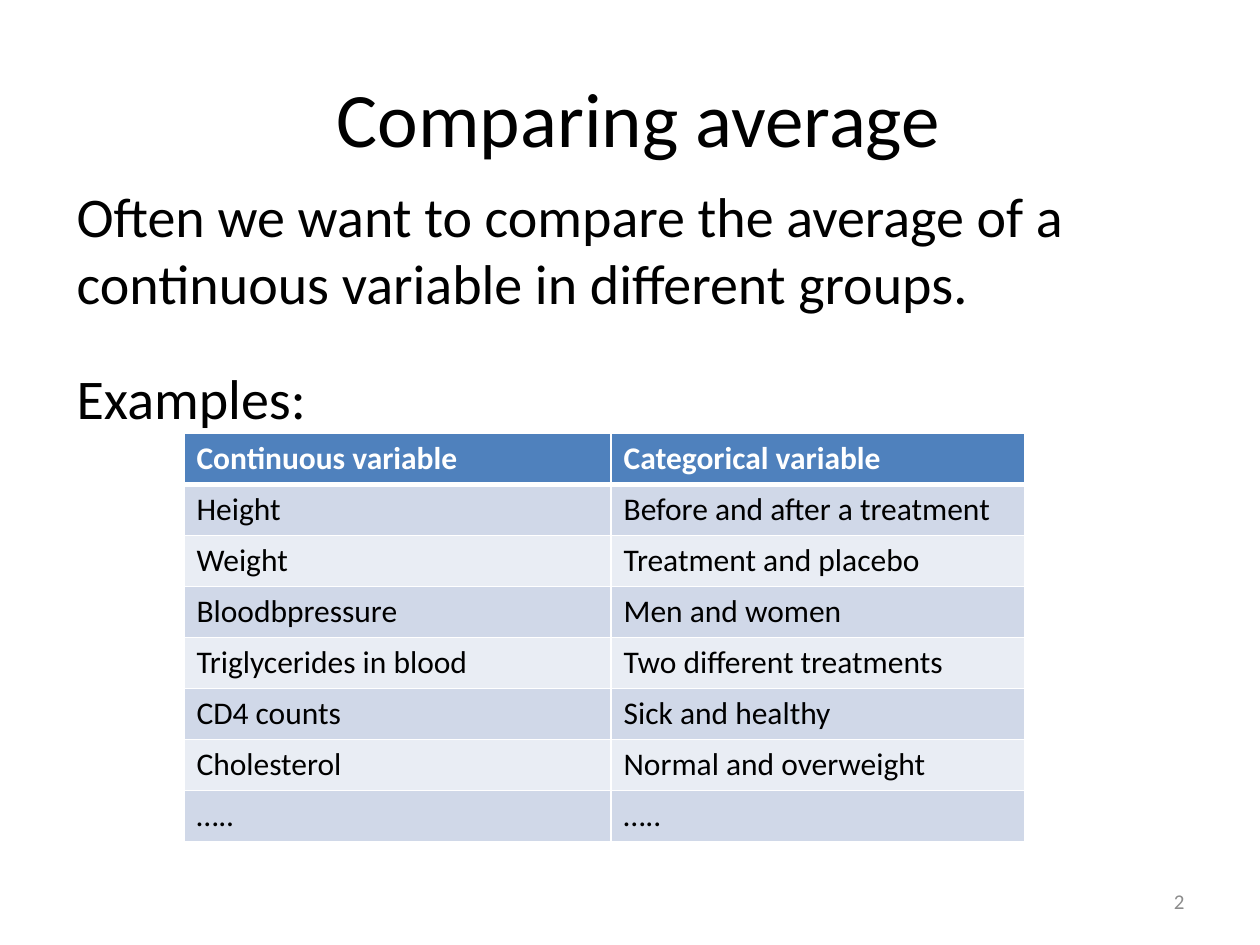
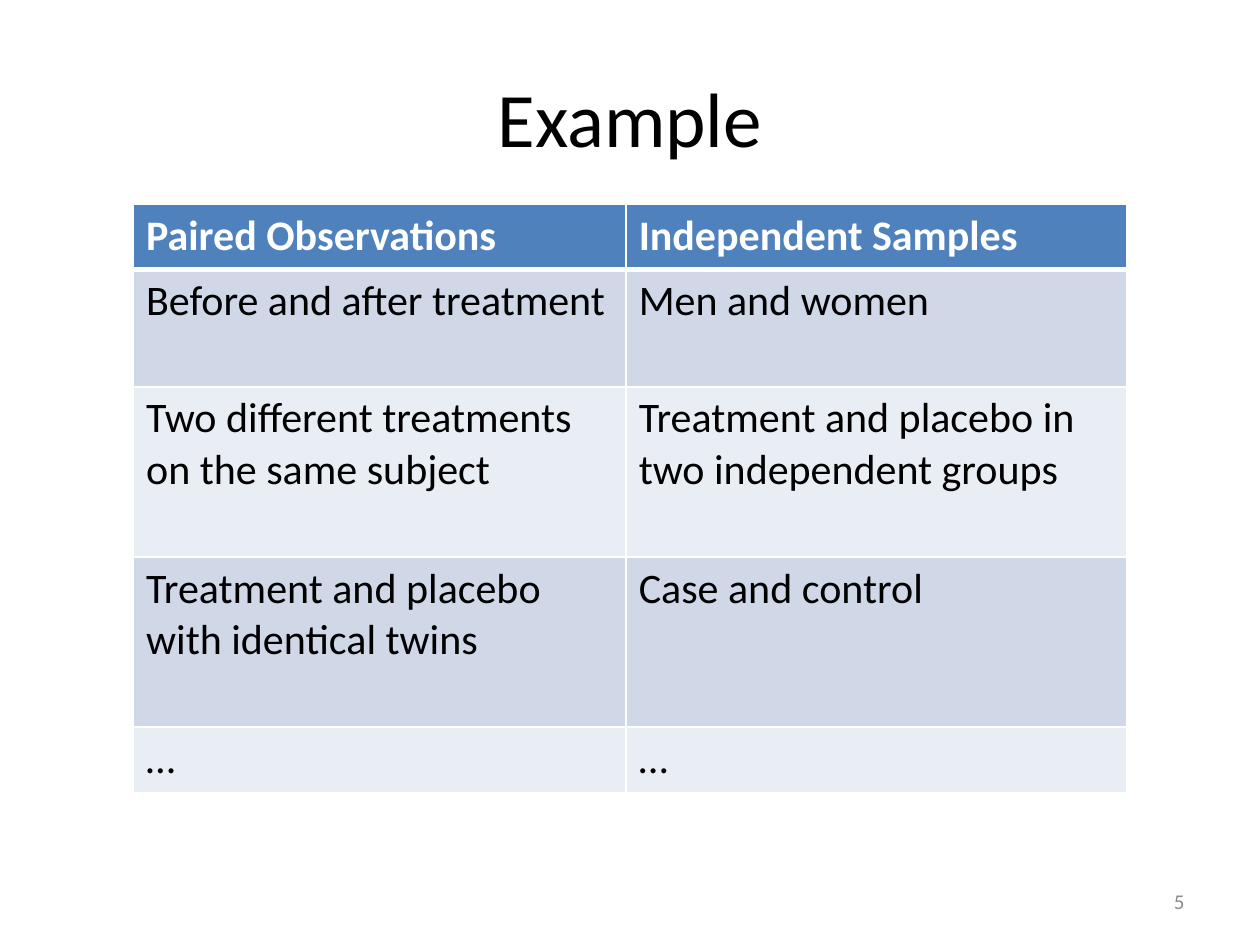
from dataclasses import dataclass

from lxml.etree import SubElement
from pptx import Presentation
from pptx.dml.color import RGBColor
from pptx.enum.text import MSO_ANCHOR, PP_ALIGN
from pptx.oxml.ns import qn
from pptx.util import Inches, Pt


@dataclass(frozen=True)
class Theme:
    """Colours, font and type sizes shared by all slides."""
    font: str = "Calibri"
    ink: str = "000000"
    white: str = "FFFFFF"
    header: str = "4F81BD"
    bands: tuple = ("D0D8E8", "E9EDF4")
    muted: str = "8C8C8C"
    title: int = 44
    body: int = 32
    number: int = 12
    rule: int = 1
    header_rule: int = 3


class Deck:
    """Draws slides on a grid of 100 columns by 75 rows."""

    def __init__(self, theme):
        """Open a 4:3 presentation."""
        self.theme = theme
        self.prs = Presentation()
        self.prs.slide_width, self.prs.slide_height = Inches(10), Inches(7.5)
        self.col = self.prs.slide_width / 100
        self.row = self.prs.slide_height / 75

    def cols(self, n):
        """Return the length of n grid columns."""
        return round(n * self.col)

    def rows(self, n):
        """Return the length of n grid rows."""
        return round(n * self.row)

    def slide(self, title, number):
        """Start a slide with its title and number."""
        self.s = self.prs.slides.add_slide(self.prs.slide_layouts[6])
        t = self.theme
        self.text([title], (5, 3, 90, 12.5), t.title, t.ink, PP_ALIGN.CENTER, MSO_ANCHOR.MIDDLE)
        self.text([number], (71.7, 69.5, 23.3, 4), t.number, t.muted, PP_ALIGN.RIGHT, MSO_ANCHOR.MIDDLE)

    def style(self, p, size, color, bold=False):
        """Set the font of a paragraph."""
        f = p.font
        f.name, f.size, f.bold = self.theme.font, Pt(size), bold
        f.color.rgb = RGBColor.from_string(color)

    def text(self, lines, box, size, color, align=PP_ALIGN.LEFT, anchor=MSO_ANCHOR.TOP, gap=0):
        """Add a text box with one paragraph per line."""
        x, y, w, h = box
        sp = self.s.shapes.add_textbox(self.cols(x), self.rows(y), self.cols(w), self.rows(h))
        tf = sp.text_frame
        tf.word_wrap, tf.vertical_anchor = True, anchor
        for i, line in enumerate(lines):
            p = tf.add_paragraph() if i else tf.paragraphs[0]
            p.text, p.alignment = line, align
            p.space_before = Pt(gap if i else 0)
            self.style(p, size, color)

    def borders(self, cell, **widths):
        """Rule the sides L, R, T and B of a cell in white."""
        tcPr = cell._tc.get_or_add_tcPr()
        for i, side in enumerate("LRTB"):
            width = widths.get(side, self.theme.rule)
            ln = SubElement(tcPr, qn(f"a:ln{side}"), w=str(Pt(width)))
            fill = SubElement(ln, qn("a:solidFill"))
            SubElement(fill, qn("a:srgbClr"), val=self.theme.white)
            tcPr.insert(i, ln)

    def table(self, records, at, widths, heights, size):
        """Add a banded table whose first record is the header."""
        t = self.theme
        frame = self.s.shapes.add_table(
            len(records), len(widths), self.cols(at[0]), self.rows(at[1]),
            self.cols(sum(widths)), self.rows(sum(heights)))
        tbl = frame.table
        tbl.horz_banding = False
        for column, w in zip(tbl.columns, widths):
            column.width = self.cols(w)
        for i, (row, h, record) in enumerate(zip(tbl.rows, heights, records)):
            row.height = self.rows(h)
            head = i == 0
            fill = t.header if head else t.bands[(i - 1) % 2]
            rules = {"B": t.header_rule} if head else {"T": t.header_rule} if i == 1 else {}
            for cell, value in zip(row.cells, record):
                cell.text = value
                cell.fill.solid()
                cell.fill.fore_color.rgb = RGBColor.from_string(fill)
                self.style(cell.text_frame.paragraphs[0], size, t.white if head else t.ink, head)
                self.borders(cell, **rules)


VARIABLES = [
    ("Continuous variable", "Categorical variable"),
    ("Height", "Before and after a treatment"),
    ("Weight", "Treatment and placebo"),
    ("Bloodbpressure", "Men and women"),
    ("Triglycerides in blood", "Two different treatments"),
    ("CD4 counts", "Sick and healthy"),
    ("Cholesterol", "Normal and overweight"),
    ("…..", "….."),
]
DESIGNS = [
    ("Paired Observations", "Independent Samples"),
    ("Before and after treatment", "Men and women"),
    ("Two different treatments on the same subject", "Treatment and placebo in two independent groups"),
    ("Treatment and placebo with identical twins", "Case and control"),
    ("…", "…"),
]


def main():
    """Build both slides and save the deck."""
    theme = Theme()
    deck = Deck(theme)

    deck.slide(" Comparing average", "2")
    deck.text(["Often we want to compare the average of a continuous variable in different groups.", "Examples:"],
              (5.1, 13.9, 83.5, 49.5), theme.body, theme.ink, gap=27.5)
    deck.table(VARIABLES, (14.6, 34.4), (33.9, 32.8), [4.05] * len(VARIABLES), 18)

    deck.slide("Example", "5")
    deck.table(DESIGNS, (10.6, 16.2), (39.1, 39.7), (5.2, 9.3, 13.5, 13.5, 5.2), 24)

    deck.prs.save("out.pptx")


if __name__ == "__main__":
    main()
